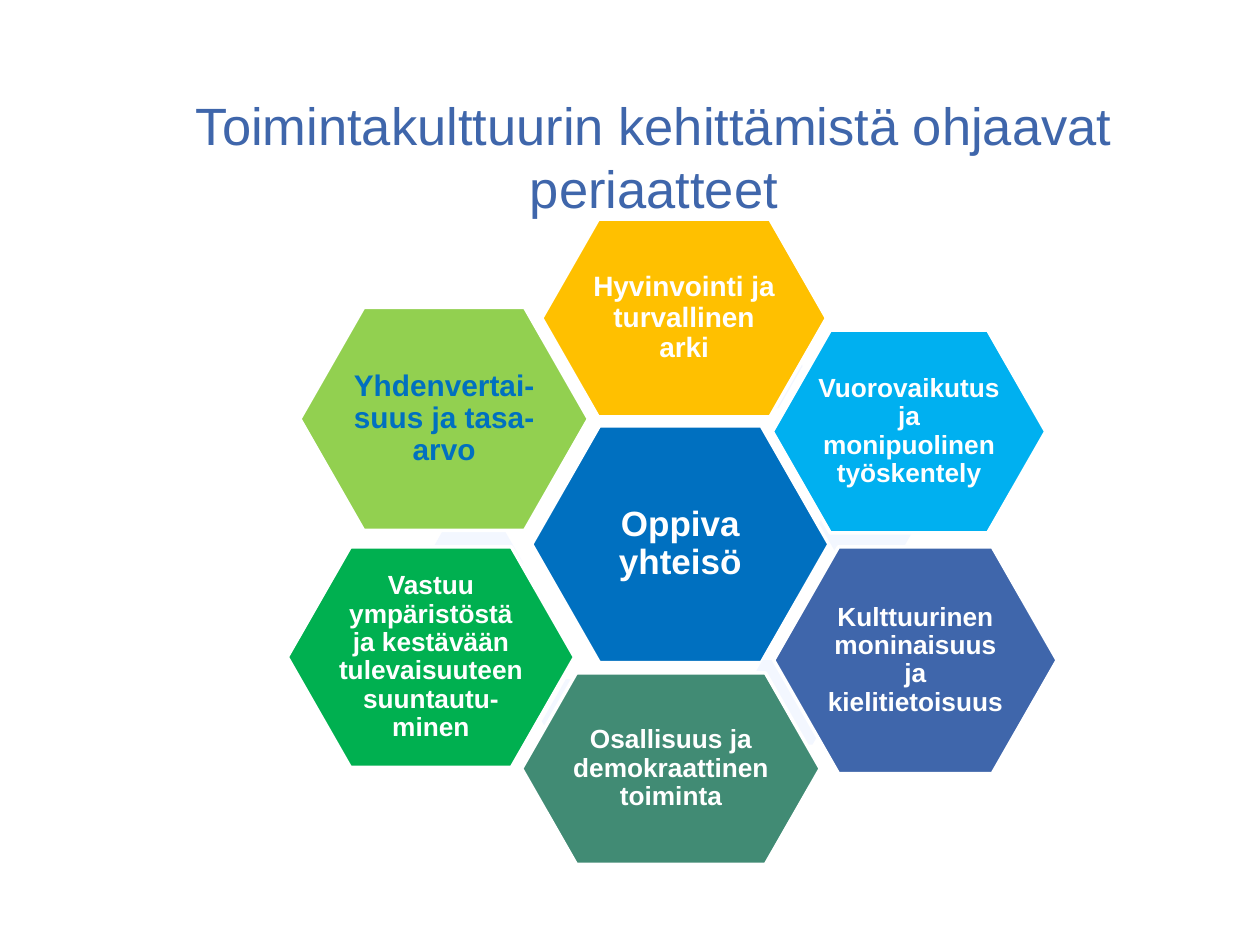
from dataclasses import dataclass

from pptx import Presentation
from pptx.dml.color import RGBColor
from pptx.enum.shapes import MSO_SHAPE
from pptx.enum.text import MSO_ANCHOR, MSO_AUTO_SIZE, PP_ALIGN
from pptx.util import Inches, Pt

FONT = "Arial"
WHITE = RGBColor(0xFF, 0xFF, 0xFF)
PALE = RGBColor(0xF3, 0xF7, 0xFF)
BLUE = RGBColor(0x00, 0x70, 0xC0)
AMBER = RGBColor(0xFF, 0xC0, 0x00)
SKY = RGBColor(0x00, 0xB0, 0xF0)
INDIGO = RGBColor(0x3F, 0x66, 0xAB)
TEAL = RGBColor(0x41, 0x8B, 0x74)
GREEN = RGBColor(0x00, 0xB0, 0x50)
LIME = RGBColor(0x92, 0xD0, 0x50)


@dataclass
class Principle:
    text: str
    box: tuple[float, float, float, float]
    fill: RGBColor
    size: int = 15
    color: RGBColor = WHITE
    accent: tuple[float, float] | None = None  # left, top of the pale hexagon behind


PRINCIPLES = [
    Principle("Oppiva yhteisö", (4.22, 3.38, 2.36, 1.88), BLUE, 20),
    Principle("Hyvinvointi ja turvallinen arki", (4.3, 1.74, 2.26, 1.57),
              AMBER, 16, accent=(5.59, 2.57)),
    Principle("Vuorovaikutus ja monipuolinen työskentely", (6.13, 2.62, 2.17, 1.61),
              SKY, accent=(6.5, 3.82)),
    Principle("Kulttuurinen moninaisuus ja kielitietoisuus", (6.14, 4.34, 2.25, 1.8),
              INDIGO, accent=(5.86, 5.24)),
    Principle("Osallisuus ja demokraattinen toiminta", (4.14, 5.34, 2.37, 1.52),
              TEAL, accent=(4.3, 5.39)),
    Principle("Vastuu ympäristöstä ja kestävään tulevaisuuteen suuntautu-minen",
              (2.28, 4.34, 2.28, 1.75), GREEN, accent=(3.37, 4.13)),
    Principle("Yhdenvertai-suus ja tasa-arvo", (2.38, 2.44, 2.29, 1.77),
              LIME, 17, BLUE),
]


def write_text(sp, text: str, *, size: int, color: RGBColor, bold: bool = False,
               spacing=0.9, anchor=MSO_ANCHOR.MIDDLE, inset: float = 0.02) -> None:
    tf = sp.text_frame
    tf.word_wrap = True
    tf.auto_size = MSO_AUTO_SIZE.NONE
    tf.vertical_anchor = anchor
    tf.margin_left = tf.margin_right = tf.margin_top = tf.margin_bottom = Inches(inset)
    p = tf.paragraphs[0]
    p.alignment = PP_ALIGN.CENTER
    p.line_spacing = spacing
    p.space_before = Pt(0)
    r = p.add_run()
    r.text = text
    r.font.name = FONT
    r.font.size = Pt(size)
    r.font.bold = bold
    r.font.color.rgb = color


def add_hexagon(slide, box: tuple[float, float, float, float], fill: RGBColor):
    sp = slide.shapes.add_shape(MSO_SHAPE.HEXAGON, *map(Inches, box))
    sp.shadow.inherit = False
    sp.adjustments[0] = 0.286
    sp.fill.solid()
    sp.fill.fore_color.rgb = fill
    sp.line.fill.background()
    return sp


def add_principle(slide, item: Principle) -> None:
    if item.accent:
        add_hexagon(slide, (*item.accent, 0.78, 0.67), PALE)
    sp = add_hexagon(slide, item.box, item.fill)
    sp.line.color.rgb = WHITE
    sp.line.width = Pt(2)
    write_text(sp, item.text, size=item.size, color=item.color, bold=True)


def main() -> None:
    prs = Presentation()
    prs.slide_width, prs.slide_height = Inches(10), Inches(7.5)
    slide = prs.slides.add_slide(prs.slide_layouts[5])

    title = slide.shapes.title
    title.left, title.top = Inches(0.9), Inches(0.52)
    title.width, title.height = Inches(8.58), Inches(1.17)
    write_text(title, "Toimintakulttuurin kehittämistä ohjaavat periaatteet",
               size=30, color=INDIGO, spacing=Pt(36), anchor=MSO_ANCHOR.TOP, inset=0.1)
    title.text_frame.margin_top = Inches(0.22)

    for item in PRINCIPLES:
        add_principle(slide, item)
    prs.save("out.pptx")


if __name__ == "__main__":
    main()
